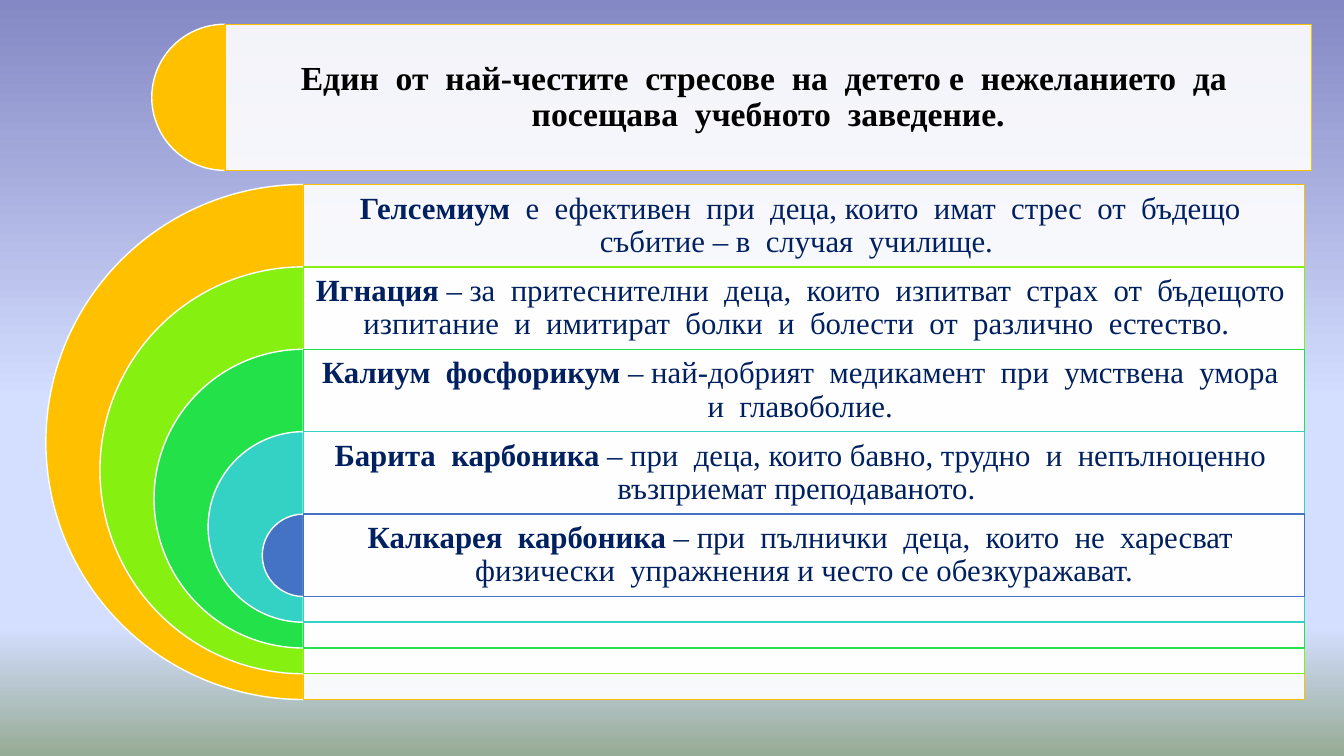
from lxml import etree
from pptx import Presentation
from pptx.dml.color import RGBColor
from pptx.enum.shapes import MSO_SHAPE
from pptx.enum.text import MSO_ANCHOR, MSO_AUTO_SIZE, PP_ALIGN
from pptx.oxml.ns import qn
from pptx.util import Inches, Pt

PIE, RECTANGLE = MSO_SHAPE.PIE, MSO_SHAPE.RECTANGLE
MIDDLE, CENTER, NO_AUTOFIT = MSO_ANCHOR.MIDDLE, PP_ALIGN.CENTER, MSO_AUTO_SIZE.NONE
TITLE_ONLY = 5
FONT = "Times New Roman"

COLORS = {
    "white": "FFFFFF", "black": "000000", "navy": "002060",
    "gold": "FFC000", "lime": "86F011", "green": "23E148",
    "turquoise": "33D2C5", "blue": "4472C4",
    "sky_top": "8488C4", "sky": "D4DEFF", "ground": "96AB94",
}
SKY_STOPS = [(0, "sky_top"), (53, "sky"), (83, "sky"), (100, "ground")]

HEADING = ("Един  от  най-честите  стресове  на  детето е  нежеланието  да  "
           "посещава  учебното  заведение.")
# Ring colour, remedy, indication
REMEDIES = [
    ("gold", "Гелсемиум ",
     " е  ефективен  при  деца, които  имат  стрес  от  бъдещо  събитие – в  случая  училище.  "),
    ("lime", "Игнация",
     " – за  притеснителни  деца,  които  изпитват  страх  от  бъдещото  изпитание  и  "
     "имитират  болки  и  болести  от  различно  естество.  "),
    ("green", "Калиум  фосфорикум ",
     "– най-добрият  медикамент  при  умствена  умора  и  главоболие. "),
    ("turquoise", "Барита  карбоника ",
     "– при  деца, които бавно, трудно  и  непълноценно  възприемат преподаваното.  "),
    ("blue", "Калкарея  карбоника ",
     "– при  пълнички  деца,  които  не  харесват  физически  упражнения и често се "
     "обезкуражават."),
]


def rgb(name):
    return RGBColor.from_string(COLORS[name])


def paint(shape, fill, line):
    shape.fill.solid()
    shape.fill.fore_color.rgb = rgb(fill)
    shape.line.color.rgb = rgb(line)
    shape.line.width = Pt(1)


def paint_panel(panel, line):
    """White fill at 90% opacity with a coloured outline."""
    paint(panel, "white", line)
    white = panel.element.spPr.find(qn("a:solidFill")).find(qn("a:srgbClr"))
    etree.SubElement(white, qn("a:alpha"), val="90000")


def add_half_disc(slide, center_x, top, diameter, color):
    disc = slide.shapes.add_shape(PIE, Inches(center_x - diameter / 2), Inches(top),
                                  Inches(diameter), Inches(diameter))
    disc.shadow.inherit = False
    # Left half: from 90 to 270 degrees
    disc.adjustments[0], disc.adjustments[1] = 54, 162
    paint(disc, color, "white")
    return disc


def format_text(frame, size, color, margin):
    frame.word_wrap = True
    frame.auto_size = NO_AUTOFIT
    frame.vertical_anchor = MIDDLE
    frame.margin_left = frame.margin_right = Inches(margin)
    frame.margin_top = frame.margin_bottom = Inches(margin)
    paragraph = frame.paragraphs[0]
    paragraph.alignment = CENTER
    paragraph.line_spacing = 0.9
    paragraph.font.name = FONT
    paragraph.font.size = Pt(size)
    paragraph.font.color.rgb = rgb(color)
    return paragraph


def paint_background(slide):
    fill = slide.background.fill
    fill.gradient()
    fill.gradient_angle = 270
    stops = slide.element.find(".//" + qn("a:gsLst"))
    stops.clear()
    for percent, color in SKY_STOPS:
        stop = etree.SubElement(stops, qn("a:gs"), pos=str(percent * 1000))
        etree.SubElement(stop, qn("a:srgbClr"), val=COLORS[color])


def add_heading(slide, left, top, width, height):
    heading = slide.shapes.title
    heading.left, heading.top = Inches(left), Inches(top)
    heading.width, heading.height = Inches(width), Inches(height)
    paint_panel(heading, "gold")
    heading.text_frame.text = HEADING
    paragraph = format_text(heading.text_frame, 24, "black", 0.1)
    paragraph.font.bold = True
    # The half disc lies behind the heading panel
    disc = add_half_disc(slide, left, top, height, "gold")
    heading.element.addprevious(disc.element)


def add_remedies(slide, left, top, width, height):
    band = 0.16 * height
    shrink = (height - band) / (len(REMEDIES) - 1)
    for index, (color, remedy, indication) in enumerate(REMEDIES):
        ring_top = top + index * band
        ring_height = height - index * shrink
        add_half_disc(slide, left, ring_top, ring_height, color)

        panel = slide.shapes.add_shape(RECTANGLE, Inches(left), Inches(ring_top),
                                       Inches(width), Inches(ring_height))
        panel.shadow.inherit = False
        paint_panel(panel, color)

        description = slide.shapes.add_textbox(Inches(left), Inches(ring_top),
                                               Inches(width), Inches(band))
        paragraph = format_text(description.text_frame, 22, "navy", 0.09)
        name_run = paragraph.add_run()
        name_run.text = remedy
        name_run.font.bold = True
        paragraph.add_run().text = indication


def main():
    deck = Presentation()
    deck.slide_width, deck.slide_height = Inches(13.33), Inches(7.5)
    slide = deck.slides.add_slide(deck.slide_layouts[TITLE_ONLY])
    paint_background(slide)
    add_heading(slide, 2.23, 0.24, 10.78, 1.45)
    add_remedies(slide, 3.01, 1.83, 9.93, 5.11)
    deck.save("out.pptx")


if __name__ == "__main__":
    main()
